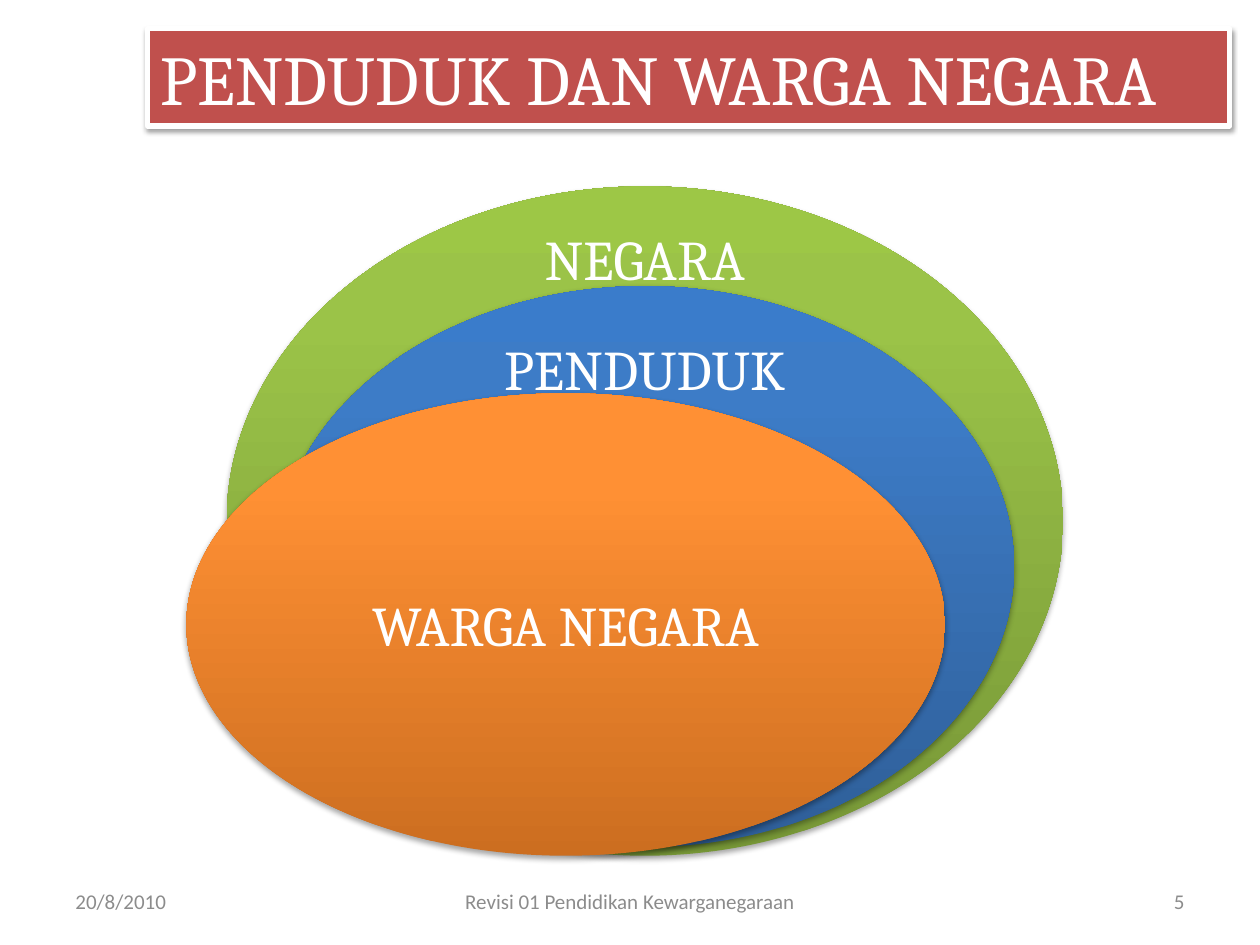
"""Build a slide of nested ellipses for state, residents and citizens."""
import dataclasses

import lxml.etree
import pptx
import pptx.dml.color
import pptx.enum.shapes
import pptx.enum.text
import pptx.oxml.ns
import pptx.util

Pt = pptx.util.Pt
Align = pptx.enum.text.PP_ALIGN
Anchor = pptx.enum.text.MSO_ANCHOR
Preset = pptx.enum.shapes.MSO_SHAPE
qn = pptx.oxml.ns.qn


@dataclasses.dataclass(frozen=True)
class Theme:
    white: str = "FFFFFF"
    red: str = "C0504D"
    grey: str = "8C8C8C"
    green: tuple = ("779737", "9BC348", "9DC746")
    blue: tuple = ("2F5F99", "3D7CC7", "3A7CCB")
    orange: tuple = ("CC6E20", "FF9034", "FF9136")
    stops: tuple = (0, 80, 100)
    heading_font: str = "Cambria"
    footer_font: str = "Calibri"
    title_size: int = 40
    label_size: int = 32
    footer_size: int = 12


def rgb(value):
    return pptx.dml.color.RGBColor.from_string(value)


def add_node(parent, tag, **attributes):
    return lxml.etree.SubElement(parent, qn(tag), attributes)


class SlideBuilder:
    def __init__(self, slide, theme):
        self.slide = slide
        self.theme = theme

    def set_text(self, shape, text, size, font, color, align, anchor):
        frame = shape.text_frame
        frame.word_wrap = True
        frame.vertical_anchor = anchor
        para = frame.paragraphs[0]
        para.text = text
        para.alignment = align
        para.font.size = Pt(size)
        para.font.name = font
        para.font.color.rgb = rgb(color)

    def shadow(self, shape, distance, opacity):
        effects = add_node(shape._element.spPr, "a:effectLst")
        outer = add_node(effects, "a:outerShdw", blurRad=str(Pt(3.1)), dist=str(Pt(distance)),
                         dir="5400000", rotWithShape="0")
        black = add_node(outer, "a:srgbClr", val="000000")
        add_node(black, "a:alpha", val=str(opacity * 1000))

    def gradient(self, shape, colors):
        shape.fill.gradient()
        fill = shape._element.spPr.find(qn("a:gradFill"))
        for child in list(fill):
            fill.remove(child)
        stops = add_node(fill, "a:gsLst")
        for position, color in zip(self.theme.stops, colors):
            stop = add_node(stops, "a:gs", pos=str(position * 1000))
            add_node(stop, "a:srgbClr", val=color)
        add_node(fill, "a:lin", ang="16200000", scaled="0")

    def title(self, text, *area):
        theme = self.theme
        box = self.slide.shapes.add_shape(Preset.RECTANGLE, *map(Pt, area))
        box.fill.solid()
        box.fill.fore_color.rgb = rgb(theme.red)
        box.line.color.rgb = rgb(theme.white)
        box.line.width = Pt(3)
        self.shadow(box, 1.6, 38)
        self.set_text(box, text, theme.title_size, theme.heading_font, theme.white,
                      Align.LEFT, Anchor.TOP)

    def ellipse(self, colors, *area):
        oval = self.slide.shapes.add_shape(Preset.OVAL, *map(Pt, area))
        self.gradient(oval, colors)
        oval.line.fill.background()
        self.shadow(oval, 1.8, 35)
        return oval

    def label(self, shape, text):
        theme = self.theme
        self.set_text(shape, text, theme.label_size, theme.heading_font, theme.white,
                      Align.CENTER, Anchor.MIDDLE)

    def text_box(self, *area):
        return self.slide.shapes.add_textbox(*map(Pt, area))

    def footer(self, text, left, width, align):
        theme = self.theme
        box = self.text_box(left, 500.5, width, 28.75)
        self.set_text(box, text, theme.footer_size, theme.footer_font, theme.grey,
                      align, Anchor.MIDDLE)


def main():
    deck = pptx.Presentation()
    deck.slide_width, deck.slide_height = Pt(720), Pt(540)
    theme = Theme()
    page = SlideBuilder(deck.slides.add_slide(deck.slide_layouts[6]), theme)

    page.title("PENDUDUK DAN WARGA NEGARA", 84.25, 16.5, 618.5, 55.5)

    page.ellipse(theme.green, 129.5, 106.5, 478, 382.5)
    page.label(page.text_box(129.5, 125, 478, 45), "NEGARA")
    page.ellipse(theme.blue, 157.5, 163.5, 422, 320.5)
    page.label(page.text_box(157.5, 188, 422, 45), "PENDUDUK")
    citizens = page.ellipse(theme.orange, 106.5, 224.75, 433.5, 264.25)
    page.label(citizens, "WARGA NEGARA")

    page.footer("20/8/2010", 36, 168, Align.LEFT)
    page.footer("Revisi 01 Pendidikan Kewarganegaraan", 246, 228, Align.CENTER)
    page.footer("5", 516, 168, Align.RIGHT)
    deck.save("out.pptx")


if __name__ == "__main__":
    main()
